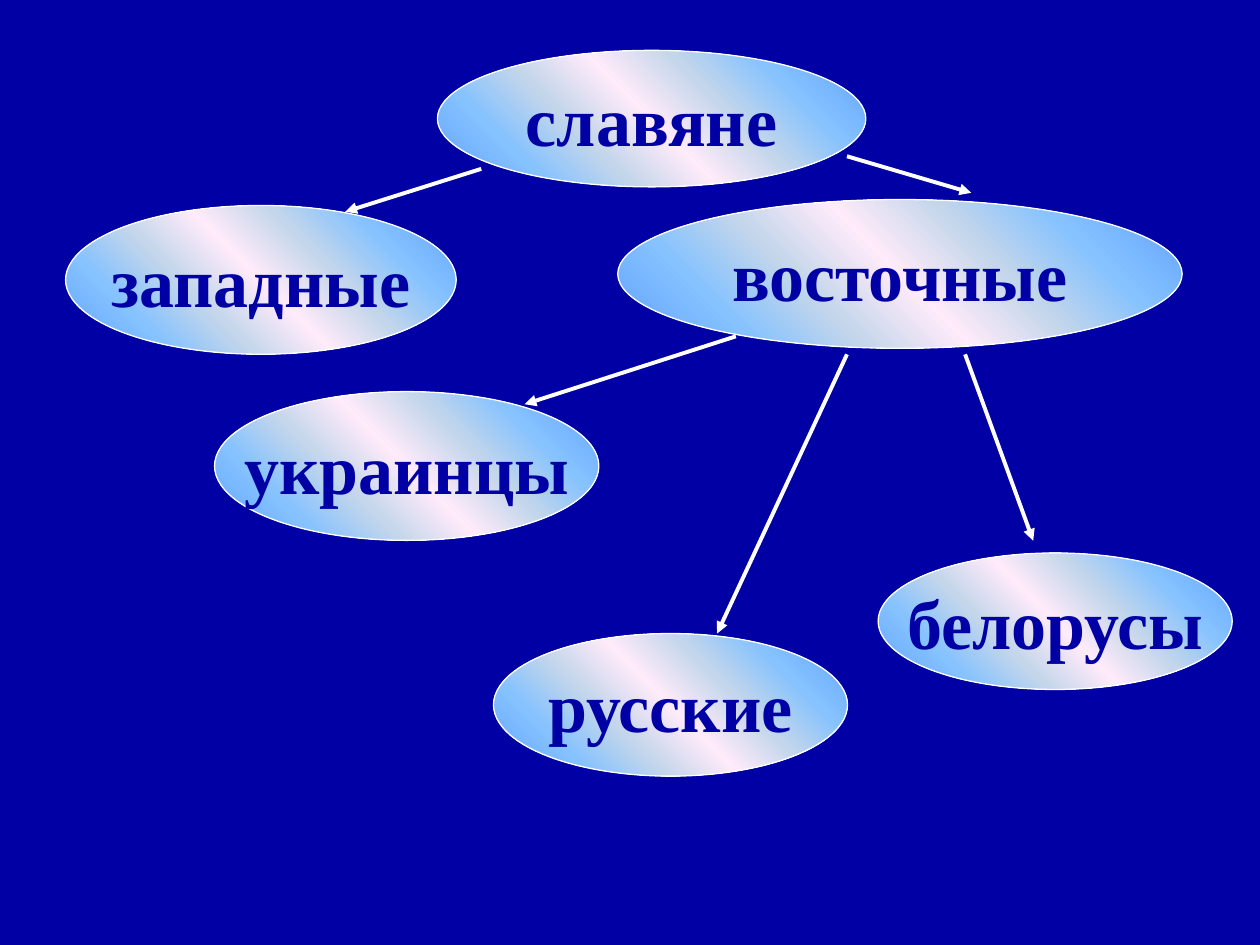
"""Draw the family tree of the Slavic peoples as ovals joined by arrows."""
from typing import NamedTuple

from lxml.etree import SubElement
from pptx import Presentation
from pptx.dml.color import RGBColor
from pptx.enum.shapes import MSO_CONNECTOR, MSO_SHAPE
from pptx.enum.text import MSO_ANCHOR, PP_ALIGN
from pptx.oxml.ns import qn
from pptx.util import Pt

COLORS = {
    "navy": "0000A4",
    "white": "FFFFFF",
    "edge": "5E9EFF",
    "sky": "85C2FF",
    "mist": "C4D6EB",
    "pink": "FFEBFA",
}
HALF = [(0, "edge"), (20, "sky"), (35, "mist")]
STOPS = HALF + [(50, "pink")] + [(100 - spot, name) for spot, name in reversed(HALF)]


class Oval(NamedTuple):
    text: str
    left: float
    top: float
    width: float
    height: float


class Arrow(NamedTuple):
    x1: float
    y1: float
    x2: float
    y2: float


OVALS = [
    Oval("славяне", 250, 28.8, 244.8, 78),
    Oval("западные", 37.5, 117.4, 223.2, 85),
    Oval("восточные", 353, 114, 322.5, 85),
    Oval("украинцы", 122.6, 223.8, 219.6, 85),
    Oval("русские", 282, 362, 202.3, 81.5),
    Oval("белорусы", 501.8, 316, 202.3, 78),
]
ARROWS = [
    Arrow(275, 96.5, 197.3, 121),
    Arrow(484, 89.3, 555, 110.2),
    Arrow(420.5, 192.2, 299.8, 231),
    Arrow(484, 202.5, 409.8, 362),
    Arrow(551.5, 202.5, 590.4, 309),
]


def tint(name: str) -> RGBColor:
    """Return a named colour."""
    return RGBColor.from_string(COLORS[name])


def write(shape, text: str, *, size: float, face: str, color: str, bold: bool) -> None:
    """Put one centred, unwrapped line of text in a shape."""
    frame = shape.text_frame
    frame.word_wrap = False
    frame.vertical_anchor = MSO_ANCHOR.MIDDLE
    line = frame.paragraphs[0]
    line.alignment = PP_ALIGN.CENTER
    run = line.add_run()
    run.text = text
    run.font.size = Pt(size)
    run.font.name = face
    run.font.bold = bold
    run.font.color.rgb = tint(color)


def shade(shape) -> None:
    """Fill a shape with the diagonal gradient."""
    shape.fill.gradient()
    shape.fill.gradient_angle = 45
    stops = shape._element.spPr.find(qn("a:gradFill")).find(qn("a:gsLst"))
    for old in list(stops):
        stops.remove(old)
    for spot, name in STOPS:
        stop = SubElement(stops, qn("a:gs"), pos=str(spot * 1000))
        SubElement(stop, qn("a:srgbClr"), val=COLORS[name])


def add_oval(slide, oval: Oval) -> None:
    """Draw one labelled oval."""
    box = map(Pt, oval[1:])
    shape = slide.shapes.add_shape(MSO_SHAPE.OVAL, *box)
    shape.shadow.inherit = False
    shade(shape)
    shape.line.color.rgb = tint("white")
    shape.line.width = Pt(0.75)
    write(shape, oval.text, size=40, face="Times New Roman", color="navy", bold=True)


def add_arrow(slide, arrow: Arrow) -> None:
    """Draw one arrow with its head at the end."""
    link = slide.shapes.add_connector(MSO_CONNECTOR.STRAIGHT, *map(Pt, arrow))
    link.line.color.rgb = tint("white")
    link.line.width = Pt(2.25)
    SubElement(link.line._get_or_add_ln(), qn("a:tailEnd"), type="triangle")
    SubElement(link._element.spPr, qn("a:effectLst"))


def main() -> None:
    """Build and save the slide."""
    deck = Presentation()
    deck.slide_width, deck.slide_height = Pt(720), Pt(540)
    slide = deck.slides.add_slide(deck.slide_layouts[6])
    slide.background.fill.solid()
    slide.background.fill.fore_color.rgb = tint("navy")
    for oval in OVALS:
        add_oval(slide, oval)
    for arrow in ARROWS:
        add_arrow(slide, arrow)
    deck.save("out.pptx")


if __name__ == "__main__":
    main()
